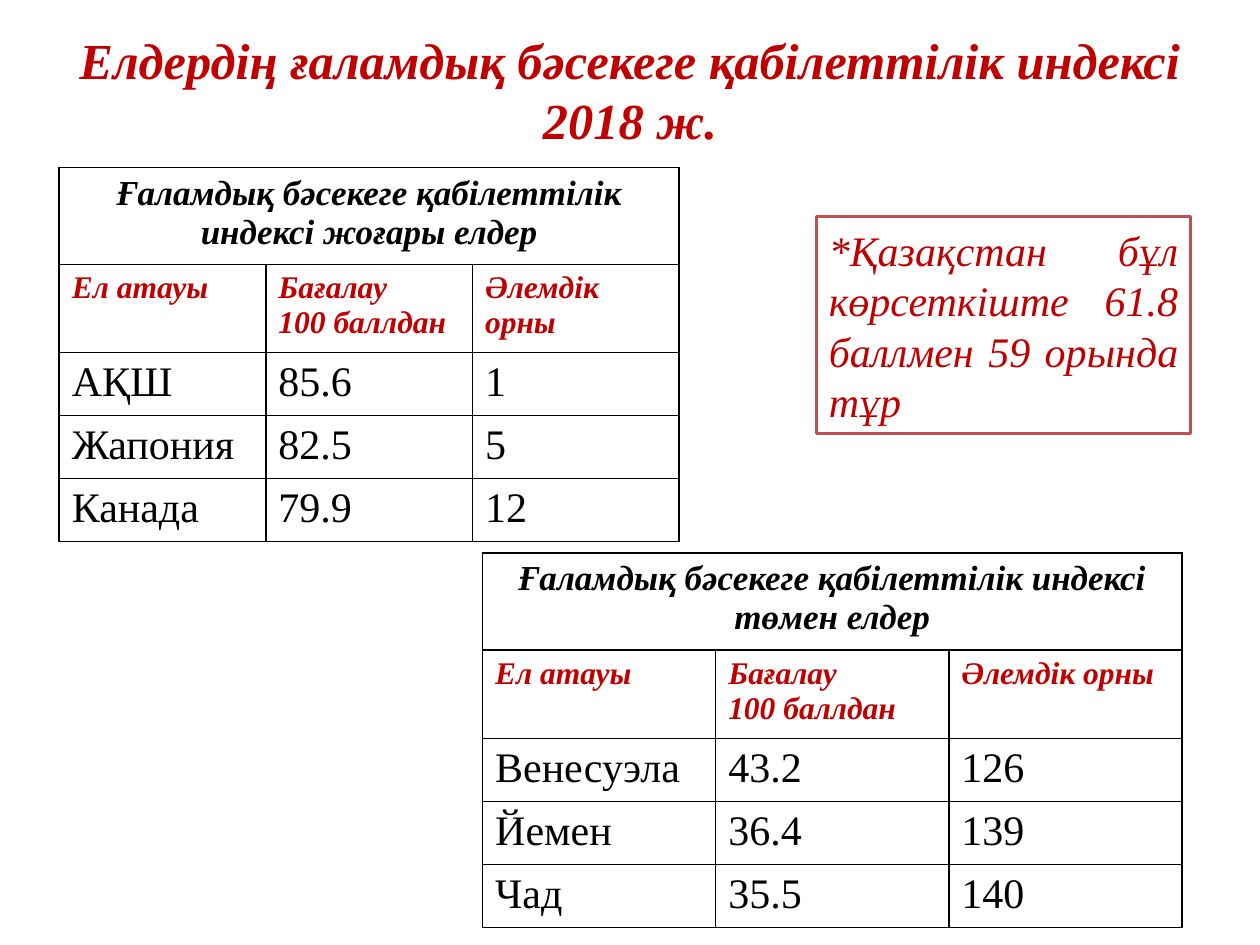
from lxml.etree import SubElement
from pptx import Presentation
from pptx.dml.color import RGBColor
from pptx.enum.shapes import MSO_SHAPE
from pptx.enum.text import MSO_ANCHOR, PP_ALIGN
from pptx.oxml.ns import qn
from pptx.util import Inches, Pt

COLORS = {"red": "C00000", "ink": "000000", "edge": "C0504D", "paper": "FFFFFF"}
FONT = "Times New Roman"
UNIT = 0.1  # inches in one grid column or row

# Text formats
TITLE = {"size": Pt(28.8), "bold": True, "italic": True, "color": "red"}
HEAD = {"size": Pt(20), "bold": True, "italic": True, "color": "ink"}
LABEL = {"size": Pt(18), "bold": True, "italic": True, "color": "red"}
BODY = {"size": Pt(24), "bold": False, "italic": False, "color": "ink"}
NOTE = {"size": Pt(24), "bold": False, "italic": True, "color": "red"}

LABELS = ("Ел атауы", "Бағалау\n100 баллдан", "Әлемдік орны")


def rgb(name):
    return RGBColor.from_string(COLORS[name])


def grid(*spans):
    return [Inches(span * UNIT) for span in spans]


class Deck:
    def __init__(self, cols, rows):
        self.prs = Presentation()
        self.prs.slide_width, self.prs.slide_height = grid(cols, rows)
        self.slide = self.prs.slides.add_slide(self.prs.slide_layouts[6])

    def label(self, frame, text, style, align=PP_ALIGN.LEFT):
        frame.word_wrap = True
        frame.text = text
        for para in frame.paragraphs:
            para.alignment = align
            for run in para.runs:
                run.font.name = FONT
                for key, value in style.items():
                    if key == "color":
                        run.font.color.rgb = rgb(value)
                    else:
                        setattr(run.font, key, value)

    def title(self, place, text):
        frame = self.slide.shapes.add_textbox(*grid(*place)).text_frame
        self.label(frame, text, TITLE, PP_ALIGN.CENTER)
        layout = {"vertical_anchor": MSO_ANCHOR.MIDDLE,
                  "margin_top": 0, "margin_bottom": Inches(0.43)}
        for key, value in layout.items():
            setattr(frame, key, value)

    def note(self, place, text):
        box = self.slide.shapes.add_shape(MSO_SHAPE.RECTANGLE, *grid(*place))
        box.shadow.inherit = False
        box.fill.solid()
        box.fill.fore_color.rgb = rgb("paper")
        box.line.color.rgb = rgb("edge")
        box.line.width = Pt(2)
        self.label(box.text_frame, text, NOTE, PP_ALIGN.JUSTIFY)

    def border(self, cell):
        props = cell._tc.get_or_add_tcPr()
        for place, side in enumerate(("lnL", "lnR", "lnT", "lnB")):
            line = SubElement(props, qn(f"a:{side}"), w=str(Pt(1)))
            fill = SubElement(line, qn("a:solidFill"))
            SubElement(fill, qn("a:srgbClr"), val=COLORS["ink"])
            props.insert(place, line)  # lines go before the fill

    def table(self, place, heights, head, rows):
        data = [(head, "", ""), LABELS, *rows]
        frame = self.slide.shapes.add_table(len(data), len(LABELS), *grid(*place))
        table = frame.table
        table.first_row = table.horz_banding = False
        for col in table.columns:
            col.width = Inches(place[2] * UNIT / len(LABELS))
        for row, height in zip(table.rows, grid(*heights)):
            row.height = height
        table.cell(0, 0).merge(table.cell(0, len(LABELS) - 1))
        styles = [HEAD, LABEL] + [BODY] * len(rows)
        for r, (line, style) in enumerate(zip(data, styles)):
            align = PP_ALIGN.LEFT if r else PP_ALIGN.CENTER
            for c, text in enumerate(line):
                cell = table.cell(r, c)
                cell.fill.background()
                self.border(cell)
                if text:
                    self.label(cell.text_frame, text, style, align)


def main():
    deck = Deck(100, 75)

    # Heading
    deck.title((5, 3, 90, 12.5),
               "Елдердің ғаламдық бәсекеге қабілеттілік индексі 2018 ж.")

    # Countries with a high index
    deck.table((4.7, 13.3, 49.2, 27.7), (7.2, 6.5, 4.68, 4.68, 4.68),
               "Ғаламдық бәсекеге қабілеттілік индексі жоғары елдер",
               [("АҚШ", "85.6", "1"),
                ("Жапония", "82.5", "5"),
                ("Канада", "79.9", "12")])

    # Countries with a low index
    deck.table((38.3, 43.9, 55.5, 29.2), (7.7, 6.8, 4.9, 4.9, 4.9),
               "Ғаламдық бәсекеге қабілеттілік индексі төмен елдер",
               [("Венесуэла", "43.2", "126"),
                ("Йемен", "36.4", "139"),
                ("Чад", "35.5", "140")])

    # Remark on Kazakhstan
    deck.note((64.8, 17.2, 29.7, 17.2),
              "*Қазақстан бұл көрсеткіште 61.8 баллмен 59 орында тұр")

    deck.prs.save("out.pptx")


if __name__ == "__main__":
    main()
